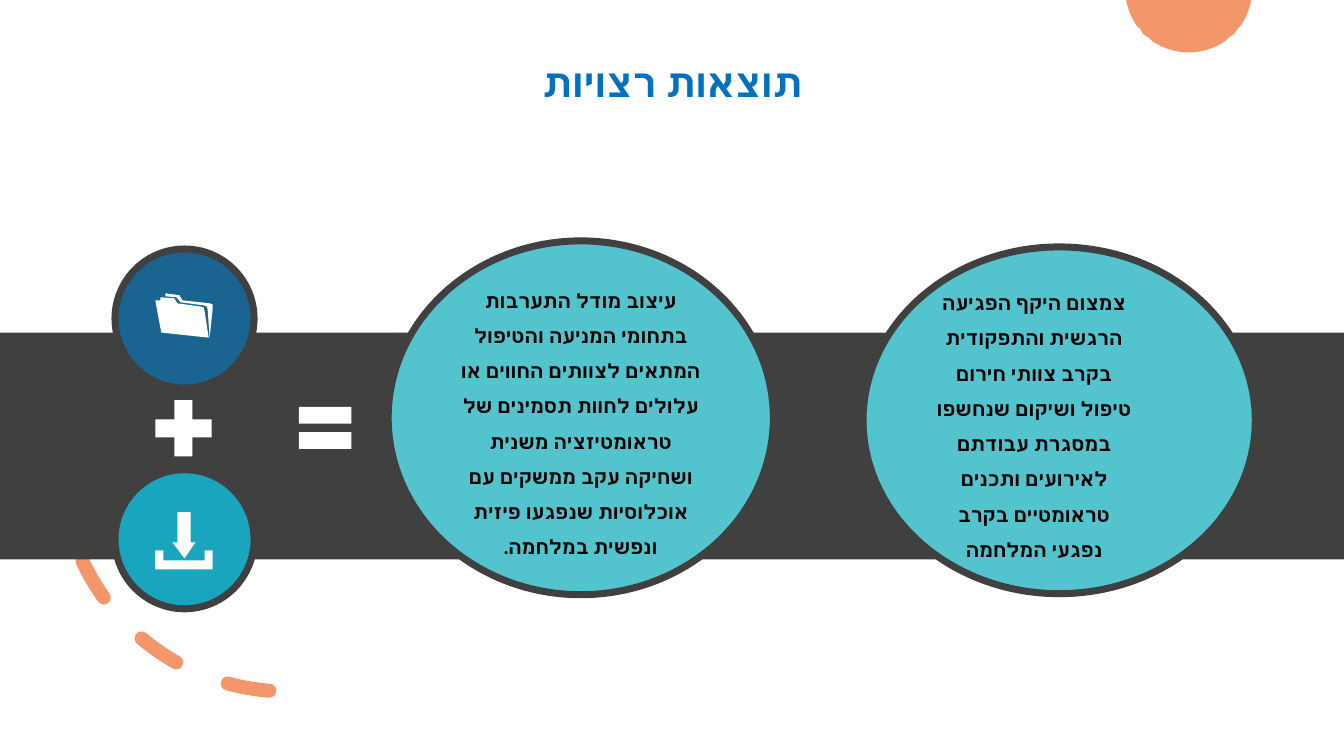
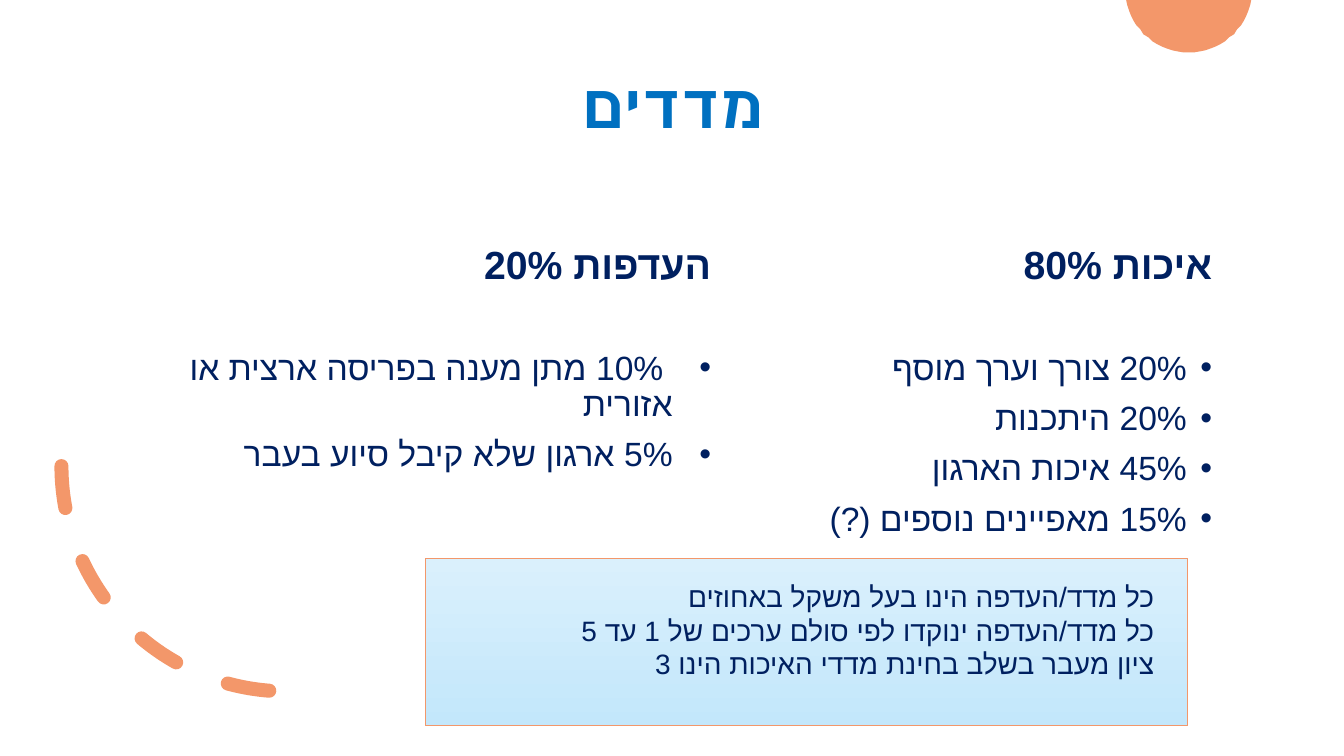
"""Build two Hebrew slides: desired outcomes and scoring measures."""
from math import cos, radians, sin

from lxml.etree import SubElement
from pptx import Presentation
from pptx.dml.color import RGBColor
from pptx.enum.dml import MSO_LINE
from pptx.enum.shapes import MSO_SHAPE
from pptx.enum.text import MSO_ANCHOR, MSO_AUTO_SIZE, PP_ALIGN
from pptx.oxml.ns import qn
from pptx.util import Pt

PX = 9144

ORANGE = RGBColor(0xF3, 0x97, 0x6A)
BLUE = RGBColor(0x00, 0x70, 0xC0)
NAVY = RGBColor(0x00, 0x20, 0x60)
GREY = RGBColor(0x40, 0x40, 0x40)
DEEP_BLUE = RGBColor(0x19, 0x64, 0x91)
TEAL = RGBColor(0x19, 0xA5, 0xBE)
AQUA = RGBColor(0x53, 0xC3, 0xCD)
PALE = RGBColor(0xDA, 0xF0, 0xFC)
SKY = RGBColor(0xC3, 0xE7, 0xFB)
SKY_EDGE = RGBColor(0xA1, 0xD9, 0xF5)
WHITE = RGBColor(0xFF, 0xFF, 0xFF)
BLACK = RGBColor(0x00, 0x00, 0x00)

OUTCOMES_TITLE = ("תוצאות רצויות", (92, 12, 1150, 145), 28)
MEASURES_TITLE = ("מדדים", (93, 35, 1150, 145), 44)

SIGNS = [
    (MSO_SHAPE.RECTANGLE, (0, 330, 1333, 225), GREY, None),
    (MSO_SHAPE.OVAL, (114, 247, 138, 138), DEEP_BLUE, (GREY, 5)),
    (MSO_SHAPE.OVAL, (114, 466, 138, 138), TEAL, (GREY, 5)),
    (MSO_SHAPE.MATH_PLUS, (144, 387, 76, 76), WHITE, None),
    (MSO_SHAPE.MATH_EQUAL, (287, 389, 71, 71), WHITE, None),
]
FOLDER = [
    [(159, 295), (173, 296), (176, 301), (198, 304), (202, 305), (203, 309),
     (207, 335), (160, 330), (154, 298), (159, 298)],
    [(164, 291), (178, 293), (181, 298), (208, 301), (211, 302), (211, 306),
     (208, 335), (206, 307), (205, 304), (202, 303), (179, 300), (175, 295),
     (164, 294)],
]
DOWNLOAD = [
    [(154, 546), (162, 546), (162, 556), (203, 556), (203, 546), (211, 546),
     (211, 565), (154, 565)],
    [(176, 508), (189, 508), (189, 538), (194, 538), (183, 554), (171, 538),
     (176, 538)],
]
OUTCOMES = [
    ((856, 245, 389, 344), "Karla", 50,
     "צמצום היקף הפגיעה הרגשית והתפקודית בקרב צוותי חירום טיפול ושיקום "
     "שנחשפו במסגרת עבודתם לאירועים ותכנים טראומטיים בקרב נפגעי המלחמה"),
    ((385, 239, 382, 351), "Arial", 0,
     "עיצוב מודל התערבות בתחומי המניעה והטיפול המתאים לצוותים החווים או "
     "עלולים לחוות תסמינים של טראומטיזציה משנית ושחיקה עקב ממשקים עם "
     "אוכלוסיות שנפגעו פיזית ונפשית במלחמה."),
]
MEASURES = [
    ((694, 239, 518, 304), "איכות 80%", 25,
     ["20% צורך וערך מוסף", "20% היתכנות", "45% איכות הארגון",
      "15% מאפיינים נוספים (?)"]),
    ((160, 239, 555, 240), "העדפות 20%", 38,
     [" 10% מתן מענה בפריסה ארצית או אזורית",
      "5% ארגון שלא קיבל סיוע בעבר"]),
]
NOTE_FRAME = (422, 554, 756, 166)
NOTE_BOX = (445, 570, 710, 111)
NOTES = [
    "כל מדד/העדפה הינו בעל משקל באחוזים",
    "כל מדד/העדפה ינוקדו לפי סולם ערכים של 1 עד 5",
    "ציון מעבר בשלב בחינת מדדי האיכות הינו 3",
]


def emu(box):
    return [v * PX for v in box]


def paint(sp, fill, line):
    sp.shadow.inherit = False
    if fill is None:
        sp.fill.background()
    else:
        sp.fill.solid()
        sp.fill.fore_color.rgb = fill
    if line is None:
        sp.line.fill.background()
    else:
        sp.line.color.rgb, sp.line.width = line[0], Pt(line[1])
    return sp


def add_shape(slide, kind, box, fill, line):
    return paint(slide.shapes.add_shape(kind, *emu(box)), fill, line)


def add_outline(slide, contours, fill):
    fb = slide.shapes.build_freeform(*contours[0][0], scale=PX)
    for i, points in enumerate(contours):
        if i:
            fb.move_to(*points[0])
        fb.add_line_segments(points[1:], close=True)
    return paint(fb.convert_to_shape(), fill, None)


def write(p, text, font, size, color, bold, cs="Karla", **fmt):
    for name, value in fmt.items():
        setattr(p, name, value)
    r = p.add_run()
    r.text = text
    r.font.color.rgb = color
    for name, value in {"name": font, "size": Pt(size), "bold": bold}.items():
        setattr(r.font, name, value)
    SubElement(r.font._element, qn("a:cs")).set("typeface", cs)


def set_rtl(p, margin=0, bullet=False):
    pPr = p._p.get_or_add_pPr()
    pPr.set("rtl", "1")
    if margin:
        pPr.set("marL", str(margin * PX))
        pPr.set("indent", str(-margin * PX if bullet else 0))
    if bullet:
        SubElement(pPr, qn("a:buFont")).set("typeface", "Arial")
        SubElement(pPr, qn("a:buChar")).set("char", "•")


def add_text(slide, box):
    tf = slide.shapes.add_textbox(*emu(box)).text_frame
    tf.word_wrap = True
    tf.auto_size = MSO_AUTO_SIZE.SHAPE_TO_FIT_TEXT
    return tf


def next_paragraph(tf, first):
    return tf.paragraphs[0] if first else tf.add_paragraph()


def add_slide(prs, title, box, size):
    slide = prs.slides.add_slide(prs.slide_layouts[5])
    sp = slide.shapes.title
    for name, value in zip(("left", "top", "width", "height"), emu(box)):
        setattr(sp, name, value)
    tf = sp.text_frame
    tf.word_wrap = True
    tf.vertical_anchor = MSO_ANCHOR.MIDDLE
    write(tf.paragraphs[0], title, "Karla", size, BLUE, True,
          alignment=PP_ALIGN.CENTER, line_spacing=0.9)

    rim = [(round(1179 + 63 * cos(radians(a))), round(-11 + 63 * sin(radians(a))))
           for a in range(10, 171, 5)]
    add_outline(slide, [rim], ORANGE)

    arc = add_shape(slide, MSO_SHAPE.ARC, (61, 239, 447, 447), None, (ORANGE, 10))
    arc.rotation = 90
    arc._element.spPr.find(qn("a:xfrm")).set("flipV", "1")
    arc.line.dash_style = MSO_LINE.DASH
    arc.line._get_or_add_ln().set("cap", "rnd")
    return slide


def build_outcomes(prs):
    slide = add_slide(prs, *OUTCOMES_TITLE)
    for sign in SIGNS:
        add_shape(slide, *sign)
    for icon in (FOLDER, DOWNLOAD):
        add_outline(slide, icon, WHITE)
    for box, font, margin, text in OUTCOMES:
        tf = add_shape(slide, MSO_SHAPE.OVAL, box, AQUA, (GREY, 5)).text_frame
        tf.word_wrap = True
        tf.vertical_anchor = MSO_ANCHOR.MIDDLE
        p = tf.paragraphs[0]
        set_rtl(p, margin)
        write(p, text, font, 14, BLACK, True,
              alignment=PP_ALIGN.CENTER, line_spacing=1.5)


def build_measures(prs):
    slide = add_slide(prs, *MEASURES_TITLE)
    right = {"alignment": PP_ALIGN.RIGHT, "cs": "Arial"}
    for box, heading, margin, items in MEASURES:
        tf = add_text(slide, box)
        p = tf.paragraphs[0]
        set_rtl(p)
        write(p, heading, "Karla", 28, NAVY, True, line_spacing=0.9, **right)
        for i, item in enumerate(items):
            p = tf.add_paragraph()
            set_rtl(p, margin, bullet=True)
            write(p, item, "Karla", 24, NAVY, False, line_spacing=0.9,
                  space_before=Pt(10 if i else 45), **right)

    panel = add_shape(slide, MSO_SHAPE.RECTANGLE, NOTE_FRAME, PALE, (SKY_EDGE, 0.5))
    panel.fill.gradient()
    panel.fill.gradient_angle = 270
    for stop, color in zip(panel.fill.gradient_stops, (PALE, SKY)):
        stop.color.rgb = color
    add_shape(slide, MSO_SHAPE.RECTANGLE, NOTE_FRAME, None, (ORANGE, 1))
    tf = add_text(slide, NOTE_BOX)
    for i, note in enumerate(NOTES):
        p = next_paragraph(tf, i == 0)
        set_rtl(p)
        write(p, note, "Karla", 20, NAVY, False, **right)


def main():
    prs = Presentation()
    prs.slide_width, prs.slide_height = emu((1333, 750))
    build_outcomes(prs)
    build_measures(prs)
    prs.save("out.pptx")


if __name__ == "__main__":
    main()
